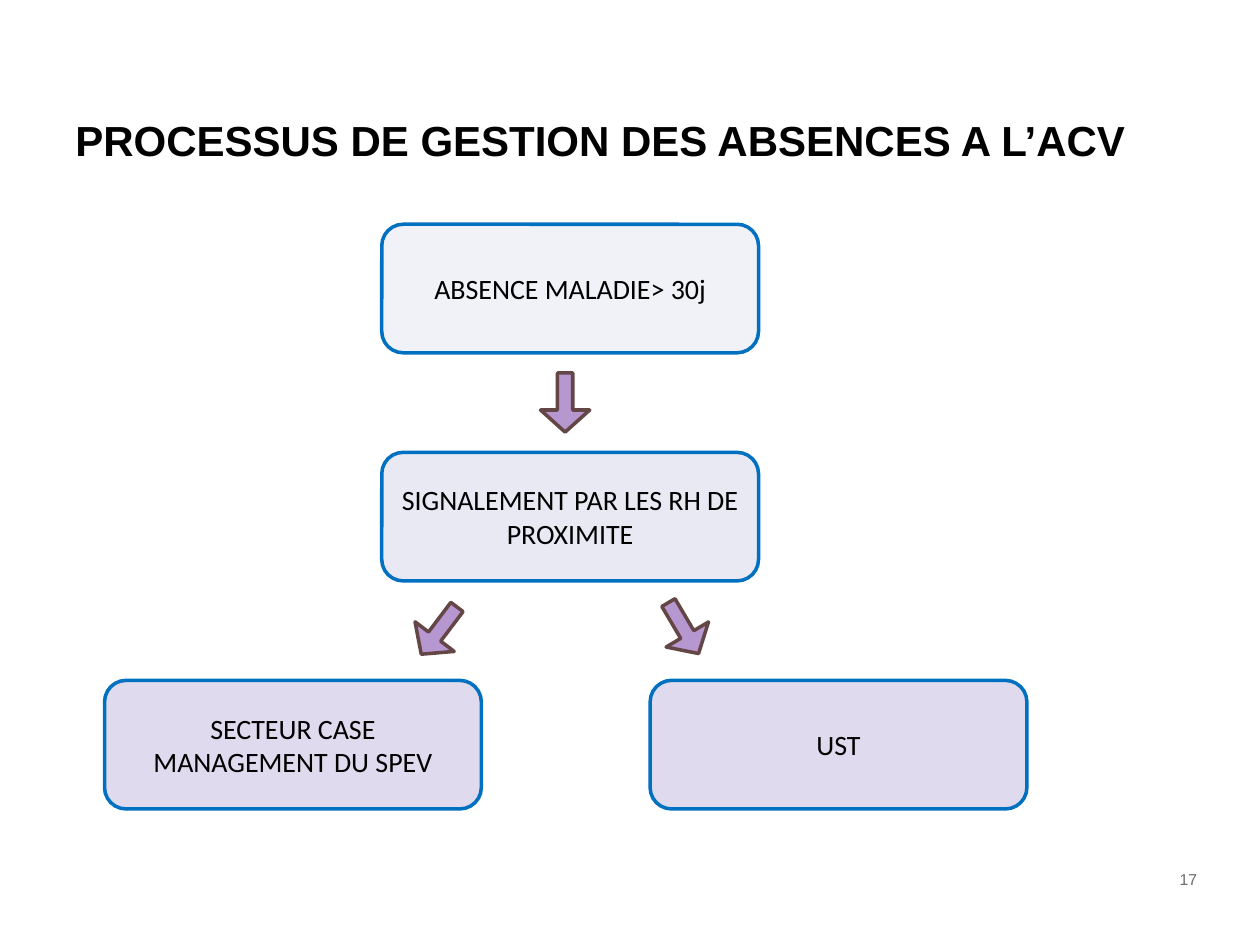
from lxml import etree
from pptx import Presentation
from pptx.dml.color import RGBColor
from pptx.enum import shapes, text
from pptx.oxml.ns import qn
from pptx.util import Inches, Pt

BLACK = RGBColor(0x00, 0x00, 0x00)
GREY = RGBColor(0x6B, 0x6C, 0x6E)
BLUE = RGBColor(0x00, 0x70, 0xC0)
INDIGO = RGBColor(0x67, 0x70, 0xB5)
VIOLET = RGBColor(0x7A, 0x65, 0xB7)
PURPLE = RGBColor(0x70, 0x30, 0xA0)
BROWN = RGBColor(0x64, 0x46, 0x46)

STEP_WIDTH, STEP_HEIGHT = 2.99, 1.02
ARROW_WIDTH, ARROW_HEIGHT = 0.39, 0.47
FIRST_ROW, ROW_PITCH = 1.78, 1.81


def write(shape, wording, font_name, size, color, align, bold=False):
    frame = shape.text_frame
    frame.word_wrap = True
    frame.vertical_anchor = text.MSO_ANCHOR.MIDDLE
    paragraph = frame.paragraphs[0]
    paragraph.alignment = align
    run = paragraph.add_run()
    run.text = wording
    run.font.name = font_name
    run.font.size = Pt(size)
    run.font.bold = bold
    run.font.color.rgb = color


def paint(shape, fill, opacity, outline):
    """Give a shape a see-through fill (opacity in percent) and a 2 pt outline."""
    shape.shadow.inherit = False
    shape.fill.solid()
    shape.fill.fore_color.rgb = fill
    color = shape.fill._xPr.find(qn("a:solidFill"))[0]
    etree.SubElement(color, qn("a:alpha")).set("val", str(opacity * 1000))
    shape.line.color.rgb = outline
    shape.line.width = Pt(2)


prs = Presentation()
prs.slide_width, prs.slide_height = Inches(10), Inches(7.5)
slide = prs.slides.add_slide(prs.slide_layouts[6])

title = slide.shapes.add_textbox(Inches(0.5), Inches(0.48), Inches(9), Inches(1.25))
write(title, "PROCESSUS DE GESTION DES ABSENCES A L’ACV", "Arial", 24, BLACK,
      text.PP_ALIGN.LEFT, bold=True)

# Steps: left, row, fill, opacity, wording
steps = [
    (3.03, 0, INDIGO, 9, "ABSENCE MALADIE> 30j"),
    (3.03, 1, INDIGO, 15, "SIGNALEMENT PAR LES RH DE PROXIMITE"),
    (0.83, 2, VIOLET, 24, "SECTEUR CASE MANAGEMENT DU SPEV"),
    (5.16, 2, VIOLET, 24, "UST"),
]
for left, row, fill, opacity, wording in steps:
    step = slide.shapes.add_shape(
        shapes.MSO_SHAPE.ROUNDED_RECTANGLE, Inches(left),
        Inches(FIRST_ROW + row * ROW_PITCH), Inches(STEP_WIDTH), Inches(STEP_HEIGHT))
    paint(step, fill, opacity, BLUE)
    write(step, wording, "Calibri", 16, BLACK, text.PP_ALIGN.CENTER)

# Arrows: left, top, rotation
for left, top, rotation in [(4.29, 2.96, 0), (3.29, 4.77, 37.1), (5.23, 4.75, 329.4)]:
    arrow = slide.shapes.add_shape(
        shapes.MSO_SHAPE.DOWN_ARROW, Inches(left), Inches(top),
        Inches(ARROW_WIDTH), Inches(ARROW_HEIGHT))
    arrow.adjustments[0] = 0.31
    arrow.adjustments[1] = 0.45
    arrow.rotation = rotation
    paint(arrow, PURPLE, 50, BROWN)

page_number = slide.shapes.add_textbox(Inches(9.05), Inches(6.82), Inches(0.55), Inches(0.31))
write(page_number, "17", "Arial", 9, GREY, text.PP_ALIGN.RIGHT)

prs.save("out.pptx")
